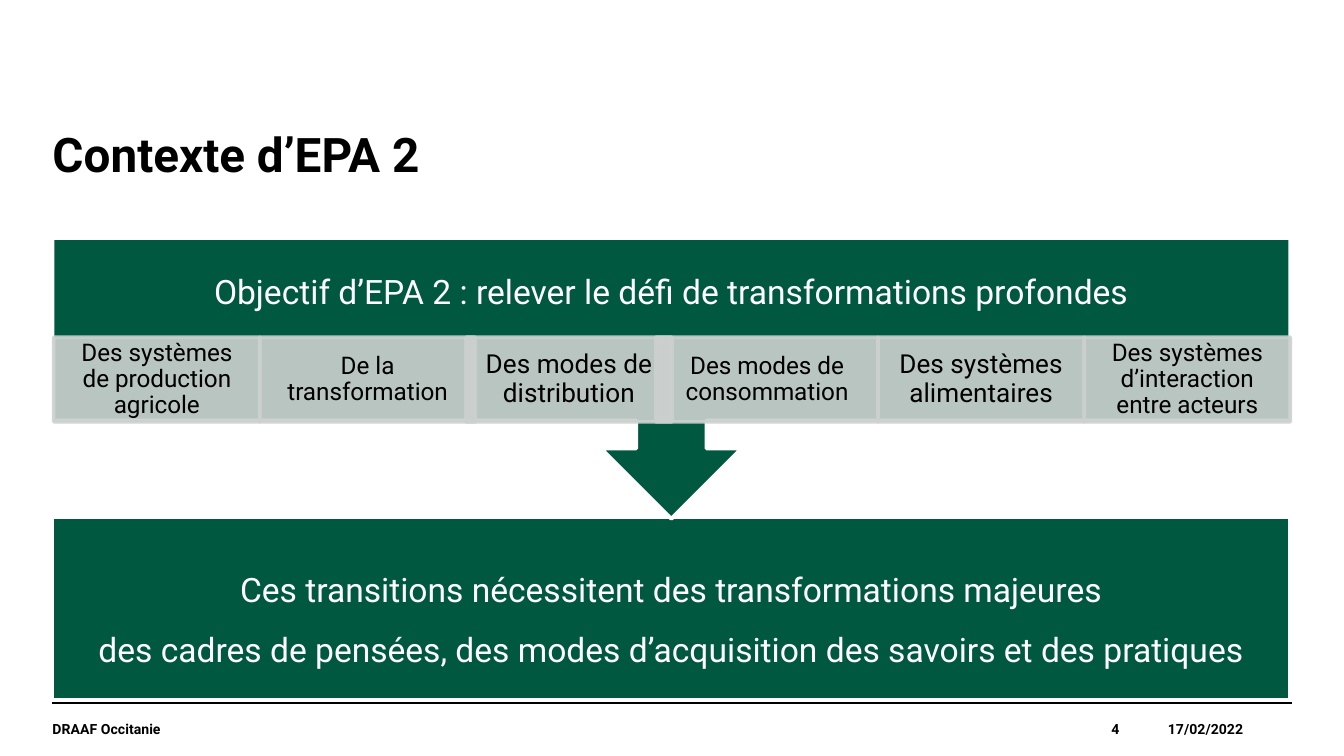
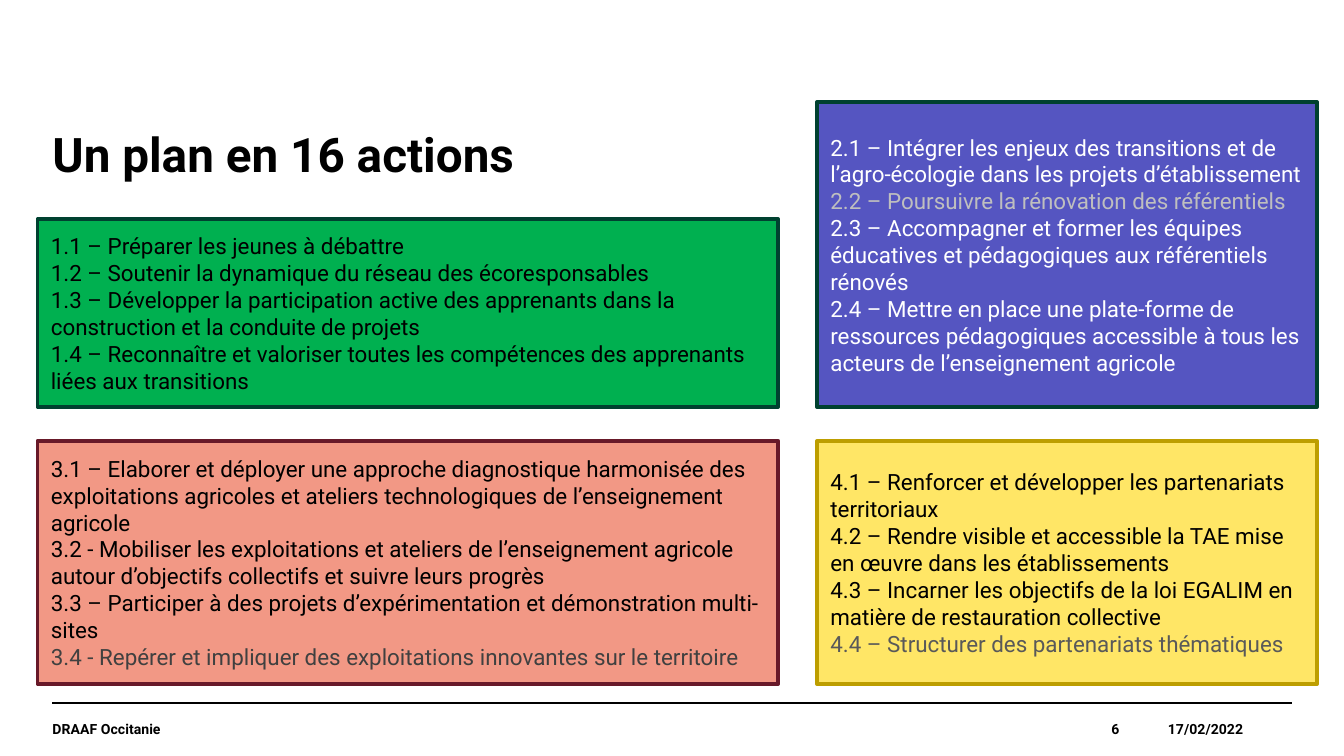
from collections import namedtuple

from lxml.etree import SubElement
from pptx import Presentation
from pptx.dml.color import RGBColor
from pptx.enum.shapes import MSO_CONNECTOR, MSO_SHAPE
from pptx.enum.text import MSO_ANCHOR as Anchor, MSO_AUTO_SIZE, PP_ALIGN as Align
from pptx.oxml.ns import qn
from pptx.util import Inches, Pt

# Shared look
FONT = "Roboto"
BLACK = RGBColor(0x00, 0x00, 0x00)
WHITE = RGBColor(0xFF, 0xFF, 0xFF)
GREEN = RGBColor(0x00, 0x58, 0x41)
MIST = RGBColor(0xCC, 0xD1, 0xCF)
DARK_GREEN = RGBColor(0x00, 0x41, 0x30)
LEAF = RGBColor(0x00, 0xB0, 0x50)
VIOLET = RGBColor(0x55, 0x55, 0xC1)
SALMON = RGBColor(0xF2, 0x98, 0x85)
BURGUNDY = RGBColor(0x68, 0x19, 0x29)
YELLOW = RGBColor(0xFF, 0xE6, 0x66)
GOLD = RGBColor(0xBD, 0x9E, 0x00)
LIGHT_GREY = RGBColor(0xBF, 0xBF, 0xBF)
DARK_GREY = RGBColor(0x40, 0x40, 0x40)
MID_GREY = RGBColor(0x59, 0x59, 0x59)

Box = namedtuple("Box", "left top width height")
TITLE_BOX = Box(0.39, 0.98, 9.21, 0.79)
FOOTER_BOX = Box(0.39, 5.23, 9.22, 0.39)
CONTEXT_BOX = Box(0.39, 1.77, 9.21, 3.44)
PLAN_BOX = Box(0.28, 0.76, 9.52, 4.33)

# Domain, extra width on the left, extra width on the right, text size
DOMAINS = [
    ("Des systèmes de production agricole", 0, 0, 13),
    ("De la transformation", 0, 0.07, 13),
    ("Des modes de distribution", 0, 0, 14),
    ("Des modes de consommation", 0.12, 0, 13),
    ("Des systèmes alimentaires", 0, 0, 14),
    ("Des systèmes d’interaction entre acteurs", 0, 0, 13),
]

# Actions of the four axes
YOUTH = [
    "1.1 – Préparer les jeunes à débattre",
    "1.2 – Soutenir la dynamique du réseau des écoresponsables",
    "1.3 – Développer la participation active des apprenants dans la "
    "construction et la conduite de projets",
    "1.4 – Reconnaître et valoriser toutes les compétences des apprenants "
    "liées aux transitions",
]
TEACHING = [
    "2.1 – Intégrer les enjeux des transitions et de l’agro-écologie dans "
    "les projets d’établissement",
    "2.2 – Poursuivre la rénovation des référentiels",
    "2.3 – Accompagner et former les équipes éducatives et pédagogiques aux "
    "référentiels rénovés",
    "2.4 – Mettre en place une plate-forme de ressources pédagogiques "
    "accessible à tous les acteurs de l’enseignement agricole",
]
FARMS = [
    "3.1 – Elaborer et déployer une approche diagnostique harmonisée des "
    "exploitations agricoles et ateliers technologiques de l’enseignement agricole",
    "3.2 - Mobiliser les exploitations et ateliers de l’enseignement agricole "
    "autour d’objectifs collectifs et suivre leurs progrès",
    "3.3 – Participer à des projets d’expérimentation et démonstration multi-sites",
    "3.4 - Repérer et impliquer des exploitations innovantes sur le territoire",
]
TERRITORY = [
    "4.1 – Renforcer et développer les partenariats territoriaux",
    "4.2 – Rendre visible et accessible la TAE mise en œuvre dans les établissements",
    "4.3 – Incarner les objectifs de la loi EGALIM en matière de restauration collective",
    "4.4 – Structurer des partenariats thématiques",
]


def lengths(box):
    return [Inches(value) for value in box]


def write(shape, lines, size, color=BLACK, bold=False, align=Align.LEFT,
          anchor=Anchor.MIDDLE, insets=(0, 0, 0, 0), spacing=None, greyed=None):
    """Fill a shape with paragraphs; insets run left, top, right, bottom."""
    frame = shape.text_frame
    frame.word_wrap = True
    frame.auto_size = MSO_AUTO_SIZE.NONE
    frame.vertical_anchor = anchor
    (frame.margin_left, frame.margin_top,
     frame.margin_right, frame.margin_bottom) = lengths(insets)
    for index, line in enumerate(lines):
        para = frame.add_paragraph() if index else frame.paragraphs[0]
        para.alignment = align
        if spacing:
            para.line_spacing = spacing
        span = para.add_run()
        span.text = line
        span.font.name = FONT
        span.font.size = Pt(size)
        span.font.bold = bold
        span.font.color.rgb = (greyed or {}).get(index, color)


def add_block(shapes, kind, box, fill, line):
    block = shapes.add_shape(kind, *lengths(box))
    block.shadow.inherit = False
    block.fill.solid()
    block.fill.fore_color.rgb = fill
    block.line.color.rgb = line
    block.line.width = Pt(2)
    return block


def set_opacity(shape, percent):
    for color in shape._element.spPr.iter(qn("a:srgbClr")):
        SubElement(color, qn("a:alpha")).set("val", str(percent * 1000))


def add_title(page, box, text):
    title = page.shapes.title
    title.left, title.top, title.width, title.height = lengths(box)
    write(title, [text], 25.5, bold=True, anchor=Anchor.TOP, spacing=0.9)


def add_footer(page, box, number):
    # Rule above the footer
    left, top = Inches(box.left), Inches(box.top)
    rule = page.shapes.add_connector(
        MSO_CONNECTOR.STRAIGHT, left, top, left + Inches(box.width), top)
    rule.line.color.rgb = BLACK
    rule.line.width = Pt(0.8)
    SubElement(rule._element.spPr, qn("a:effectLst"))
    # Author, page number and date, side by side
    x = box.left
    for text, width, align in [("DRAAF Occitanie", 6.46, Align.LEFT),
                               (number, 1.48, Align.RIGHT),
                               ("17/02/2022", 1.28, Align.CENTER)]:
        label = page.shapes.add_textbox(*lengths(Box(x, box.top, width, box.height)))
        write(label, [text], 7.5, bold=True, align=align)
        x += width


def add_page(deck, title, number):
    page = deck.slides.add_slide(deck.slide_layouts[5])
    add_title(page, TITLE_BOX, title)
    add_footer(page, FOOTER_BOX, number)
    return page


def add_context(page, box):
    shapes = page.shapes.add_group_shape().shapes

    # Conclusion band
    band = add_block(shapes, MSO_SHAPE.RECTANGLE,
                     Box(box.left, box.top + 2.08, box.width, 1.36), GREEN, WHITE)
    write(band, ["Ces transitions nécessitent des transformations majeures",
                 "des cadres de pensées, des modes d’acquisition des savoirs et des pratiques"],
          18, WHITE, align=Align.CENTER, insets=[0.14] * 4, spacing=1.5)

    # Goal, with an arrow down to the conclusion
    goal = add_block(shapes, MSO_SHAPE.DOWN_ARROW_CALLOUT,
                     Box(box.left, box.top, box.width, 2.09), GREEN, WHITE)
    for index, value in enumerate([0.25, 0.25, 0.25, 0.65]):
        goal.adjustments[index] = value
    write(goal, ["Objectif d’EPA 2 : relever le défi de transformations profondes"],
          18, WHITE, align=Align.CENTER, insets=(0.14, 0.14, 0.14, 0.67), spacing=0.9)

    # Row of domains
    margin = 0.01
    step = (box.width - margin) / len(DOMAINS)
    for index, (text, before, after, size) in enumerate(DOMAINS):
        cell = Box(box.left + margin + index * step - before, box.top + 0.74,
                   step + before + after, 0.63)
        domain = add_block(shapes, MSO_SHAPE.RECTANGLE, cell, MIST, MIST)
        set_opacity(domain, 90)
        write(domain, [text], size, align=Align.CENTER,
              insets=(0.11, 0.02, 0.11, 0.02), spacing=0.9)


def add_plan(page, box):
    wide, narrow, low = 5.51, 3.72, 1.81
    right = box.left + box.width - narrow
    bottom = box.top + box.height - low
    upper_end = box.top + 2.27
    # Place, fill, outline, text colour, actions, greyed actions by position
    axes = [
        (Box(right, box.top, narrow, 2.27), VIOLET, DARK_GREEN, WHITE,
         TEACHING, {1: LIGHT_GREY}),
        (Box(box.left, upper_end - 1.4, wide, 1.4), LEAF, DARK_GREEN, BLACK, YOUTH, {}),
        (Box(box.left, bottom, wide, low), SALMON, BURGUNDY, BLACK,
         FARMS, {3: DARK_GREY}),
        (Box(right, bottom, narrow, low), YELLOW, GOLD, BLACK,
         TERRITORY, {3: MID_GREY}),
    ]
    for place, fill, line, color, actions, greyed in axes:
        axis = add_block(page.shapes, MSO_SHAPE.RECTANGLE, place, fill, line)
        write(axis, actions, 12, color, insets=(0.1, 0.05, 0.1, 0.05), greyed=greyed)


def main():
    deck = Presentation()
    # Widescreen, 16:9
    deck.slide_width = Inches(10)
    deck.slide_height = Inches(10 * 9 / 16)
    add_context(add_page(deck, "Contexte d’EPA 2", "4"), CONTEXT_BOX)
    add_plan(add_page(deck, "Un plan en 16 actions", "6"), PLAN_BOX)
    deck.save("out.pptx")


if __name__ == "__main__":
    main()
